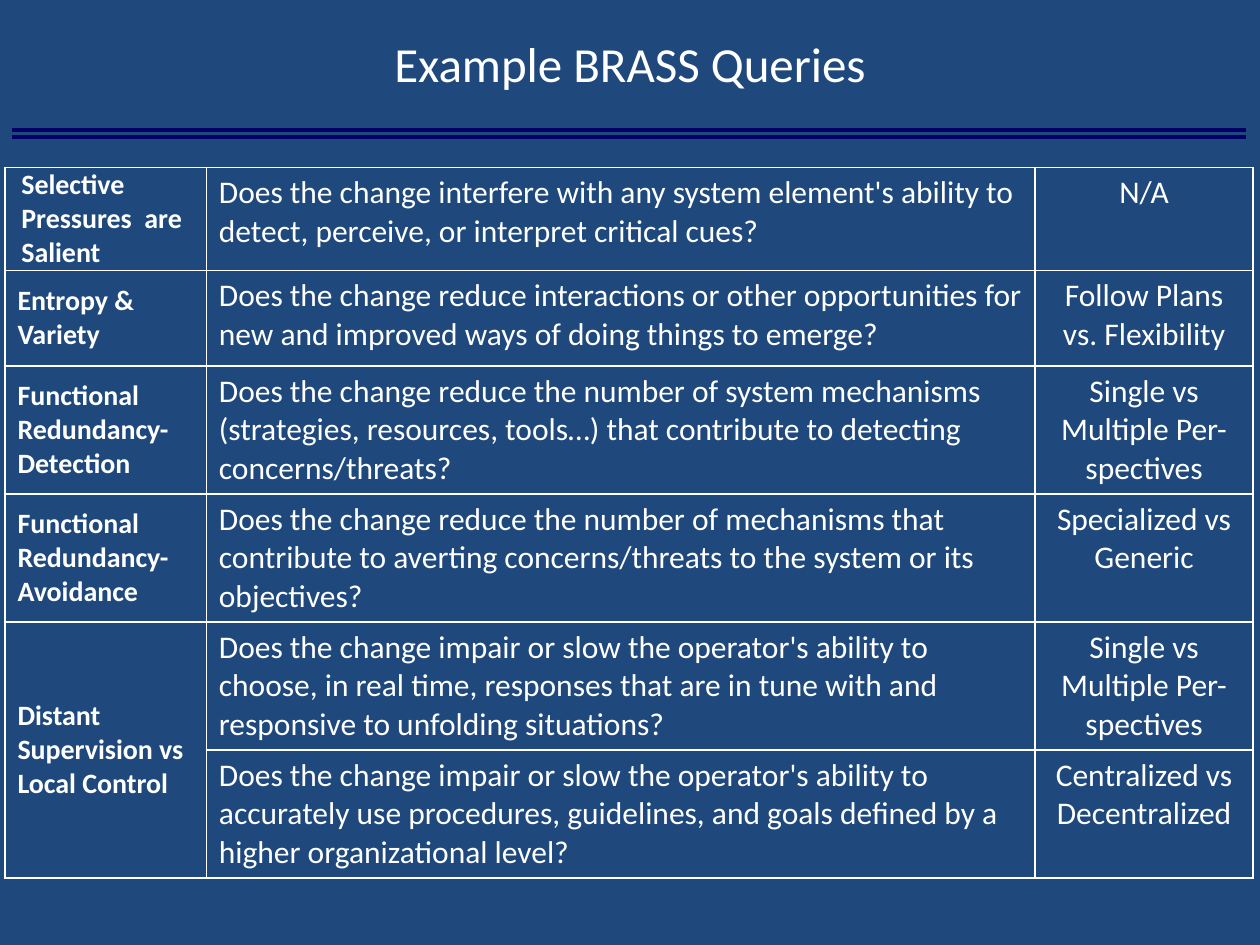
from dataclasses import dataclass

from lxml import etree
from pptx import Presentation
from pptx import util as u
from pptx.dml.color import RGBColor
from pptx.enum import shapes, text
from pptx.oxml import ns


@dataclass(frozen=True)
class Theme:
    back: str = "1F497D"
    ink: str = "FFFFFF"
    rule: str = "000066"
    font: str = "Calibri"
    title: int = 28
    label: int = 16
    body: int = 18


@dataclass(frozen=True)
class Query:
    label: str  # empty: shares the label above
    ask: str
    trade: str


THEME = Theme()
COLS = (4.06, 16.71, 4.39)
TOP, REST = 1.6, 1.93  # row heights
QUERIES = (
    Query("Selective Pressures  are Salient",
          "Does the change interfere with any system element's ability to "
          "detect, perceive, or interpret critical cues?",
          "N/A"),
    Query("Entropy & Variety",
          "Does the change reduce interactions or other opportunities for "
          "new and improved ways of doing things to emerge?",
          "Follow Plans vs. Flexibility"),
    Query("Functional Redundancy- Detection",
          "Does the change reduce the number of system mechanisms "
          "(strategies, resources, tools…) that contribute to detecting "
          "concerns/threats?",
          "Single vs Multiple Per-spectives"),
    Query("Functional Redundancy- Avoidance",
          "Does the change reduce the number of mechanisms that contribute "
          "to averting concerns/threats to the system or its objectives?",
          "Specialized vs Generic"),
    Query("Distant Supervision vs Local Control",
          "Does the change impair or slow the operator's ability to choose, "
          "in real time, responses that are in tune with and responsive to "
          "unfolding situations?",
          "Single vs Multiple Per-spectives"),
    Query("",
          "Does the change impair or slow the operator's ability to "
          "accurately use procedures, guidelines, and goals defined by a "
          "higher organizational level?",
          "Centralized vs Decentralized"),
)


def style(para, size: int, align, bold: bool = False) -> None:
    para.alignment = align
    font = para.font
    font.name, font.size, font.bold = THEME.font, u.Pt(size), bold
    font.color.rgb = RGBColor.from_string(THEME.ink)


def border(cell) -> None:
    props = cell._tc.get_or_add_tcPr()
    for spot, side in enumerate("LRTB"):
        line = etree.Element(ns.qn(f"a:ln{side}"), w=str(u.Pt(1)))
        fill = etree.SubElement(line, ns.qn("a:solidFill"))
        etree.SubElement(fill, ns.qn("a:srgbClr"), val=THEME.ink)
        props.insert(spot, line)


def write(cell, words: str, col: int) -> None:
    cell.fill.background()
    border(cell)
    if not words:
        return
    para = cell.text_frame.paragraphs[0]
    para.text = words
    size = THEME.label if col == 0 else THEME.body
    align = text.PP_ALIGN.CENTER if col == 2 else text.PP_ALIGN.LEFT
    style(para, size, align, bold=col == 0)
    if col == 0:
        cell.vertical_anchor = text.MSO_ANCHOR.MIDDLE


def rule(slide, y: float) -> None:
    line = slide.shapes.add_connector(
        shapes.MSO_CONNECTOR.STRAIGHT,
        u.Cm(0.25), u.Cm(y), u.Cm(25.12), u.Cm(y))
    line.line.color.rgb = RGBColor.from_string(THEME.rule)
    line.line.width = u.Pt(2.25)
    etree.SubElement(line._element.spPr, ns.qn("a:effectLst"))


def head(slide, words: str) -> None:
    title = slide.shapes.title
    title.left, title.top = u.Cm(3.91), u.Cm(0.23)
    title.width, title.height = u.Cm(17.58), u.Cm(2.08)
    title.text_frame.text = words
    title.text_frame.vertical_anchor = text.MSO_ANCHOR.MIDDLE
    style(title.text_frame.paragraphs[0], THEME.title, text.PP_ALIGN.CENTER)


def grid(slide) -> None:
    frame = slide.shapes.add_table(
        len(QUERIES), len(COLS),
        u.Cm(0.1), u.Cm(3.38), u.Cm(sum(COLS)), u.Cm(14.12))
    table = frame.table
    table.first_row = table.horz_banding = False
    for col, width in zip(table.columns, COLS):
        col.width = u.Cm(width)
    for num, query in enumerate(QUERIES):
        table.rows[num].height = u.Cm(REST if num else TOP)
        for col, words in enumerate((query.label, query.ask, query.trade)):
            write(table.cell(num, col), words, col)
        if not query.label:
            table.cell(num - 1, 0).merge(table.cell(num, 0))
    # The first label sits tight in its short row
    first = table.cell(0, 0)
    first.margin_left = u.Cm(0.33)
    first.margin_right = first.margin_top = first.margin_bottom = 0
    frame.height = u.Cm(14.12)


def main() -> None:
    deck = Presentation()
    deck.slide_width, deck.slide_height = u.Cm(25.4), u.Cm(19.05)
    slide = deck.slides.add_slide(deck.slide_layouts[5])
    slide.background.fill.solid()
    slide.background.fill.fore_color.rgb = RGBColor.from_string(THEME.back)
    # Heading with its double rule
    head(slide, "Example BRASS Queries")
    for y in (2.62, 2.77):
        rule(slide, y)
    # Queries and their trade-offs
    grid(slide)
    deck.save("out.pptx")


if __name__ == "__main__":
    main()
